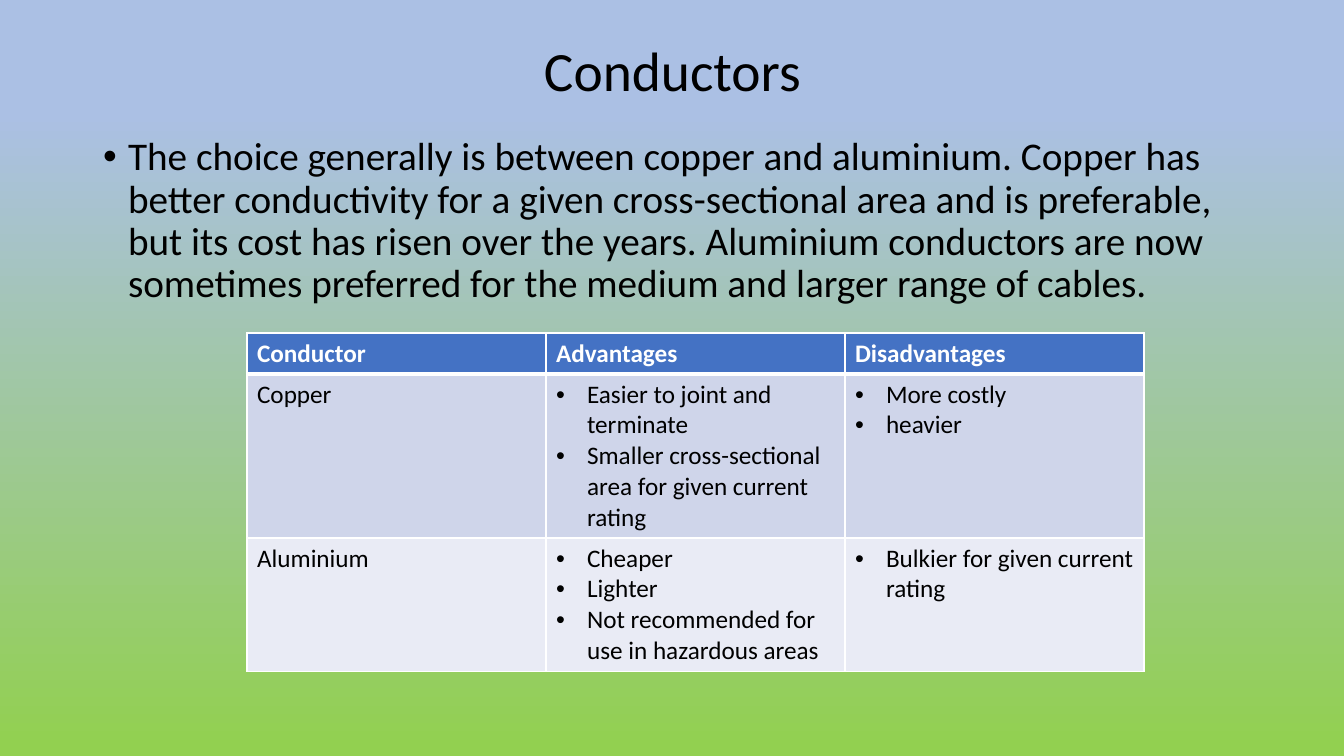
from lxml import etree
from pptx import Presentation
from pptx.dml.color import RGBColor
from pptx.enum.text import MSO_ANCHOR, MSO_AUTO_SIZE, PP_ALIGN
from pptx.oxml.ns import qn
from pptx.util import Emu, Pt

LEFT, CENTER = PP_ALIGN.LEFT, PP_ALIGN.CENTER
TOP, MIDDLE = MSO_ANCHOR.TOP, MSO_ANCHOR.MIDDLE
NO_AUTOFIT = MSO_AUTO_SIZE.NONE
SLIDE_WIDTH, SLIDE_HEIGHT = 1344, 756
SCALE = 12192000 / SLIDE_WIDTH
FONT = "Calibri"
COLORS = {
    "sky": "ABC0E4",
    "grass": "92D050",
    "text": "000000",
    "white": "FFFFFF",
    "header": "4472C4",
    "band_dark": "CFD5EA",
    "band_light": "E9EBF5",
}

TITLE = "Conductors"
BODY = (
    "The choice generally is between copper and aluminium. Copper has better "
    "conductivity for a given cross-sectional area and is preferable, but its cost "
    "has risen over the years. Aluminium conductors are now sometimes preferred "
    "for the medium and larger range of cables."
)
HEADERS = ["Conductor", "Advantages", "Disadvantages"]
CONDUCTORS = [
    (
        "Copper",
        ["Easier to joint and terminate", "Smaller cross-sectional area for given current rating"],
        ["More costly", "heavier"],
    ),
    (
        "Aluminium",
        ["Cheaper", "Lighter", "Not recommended for use in hazardous areas"],
        ["Bulkier for given current rating"],
    ),
]


def px(length):
    return Emu(round(length * SCALE))


def add_color(parent, name):
    solid = etree.SubElement(parent, qn("a:solidFill"))
    etree.SubElement(solid, qn("a:srgbClr"), val=COLORS[name])


def write_text(frame, lines, size=18, color="text", bold=False, align=LEFT,
               indent=0, line_spacing=None):
    for index, line in enumerate(lines):
        paragraph = frame.paragraphs[0] if index == 0 else frame.add_paragraph()
        if indent:
            properties = paragraph._p.get_or_add_pPr()
            properties.set("marL", str(px(indent)))
            properties.set("indent", str(-px(indent)))
            etree.SubElement(properties, qn("a:buFont"), typeface="Arial")
            etree.SubElement(properties, qn("a:buChar"), char="•")
        paragraph.alignment = align
        paragraph.space_before = Pt(0)
        if line_spacing:
            paragraph.line_spacing = line_spacing
        run = paragraph.add_run()
        run.text = line
        run.font.name = FONT
        run.font.size = Pt(size)
        run.font.bold = bold
        run.font.color.rgb = RGBColor.from_string(COLORS[color])


class SlideBuilder:
    def __init__(self, presentation):
        self.slide = presentation.slides.add_slide(presentation.slide_layouts[1])

    def background(self, stops):
        fill = self.slide.background.fill
        fill.gradient()
        fill.gradient_angle = 270
        stop_list = self.slide._element.find(".//" + qn("a:gsLst"))
        for stop in list(stop_list):
            stop_list.remove(stop)
        for percent, name in stops:
            stop = etree.SubElement(stop_list, qn("a:gs"), pos=str(percent * 1000))
            etree.SubElement(stop, qn("a:srgbClr"), val=COLORS[name])

    def placeholder(self, index, lines, left, top, width, height, anchor=TOP, **style):
        shape = self.slide.placeholders[index]
        shape.left, shape.top = px(left), px(top)
        shape.width, shape.height = px(width), px(height)
        frame = shape.text_frame
        frame.word_wrap = True
        frame.auto_size = NO_AUTOFIT
        frame.vertical_anchor = anchor
        write_text(frame, lines, **style)

    def cell(self, cell, content, fill, top=1, bottom=1, **style):
        properties = cell._tc.get_or_add_tcPr()
        for side, width in (("L", 1), ("R", 1), ("T", top), ("B", bottom)):
            line = etree.SubElement(properties, qn("a:ln" + side), w=str(Pt(width)))
            add_color(line, "white")
        cell.fill.solid()
        cell.fill.fore_color.rgb = RGBColor.from_string(COLORS[fill])
        if isinstance(content, list):
            write_text(cell.text_frame, content, indent=31, **style)
        else:
            write_text(cell.text_frame, [content], **style)

    def table(self, left, top, column_width, row_heights, headers, rows):
        table = self.slide.shapes.add_table(
            len(row_heights), len(headers), px(left), px(top),
            px(column_width * len(headers)), px(sum(row_heights)),
        ).table
        for column in table.columns:
            column.width = px(column_width)
        for row, height in zip(table.rows, row_heights):
            row.height = px(height)
        for column, header in enumerate(headers):
            self.cell(table.cell(0, column), header, "header", bottom=3,
                      color="white", bold=True)
        for row, contents in enumerate(rows, 1):
            fill = "band_dark" if row % 2 else "band_light"
            for column, content in enumerate(contents):
                self.cell(table.cell(row, column), content, fill, top=3 if row == 1 else 1)


def main():
    presentation = Presentation()
    presentation.slide_width = px(SLIDE_WIDTH)
    presentation.slide_height = px(SLIDE_HEIGHT)
    builder = SlideBuilder(presentation)
    builder.background([(3, "sky"), (15, "sky"), (99, "grass")])
    builder.placeholder(0, [TITLE], 93, 40, 1159, 67, anchor=MIDDLE,
                        size=39.6, align=CENTER, line_spacing=0.9)
    builder.placeholder(1, [BODY], 93, 132, 1159, 548,
                        size=28, indent=25, line_spacing=0.9)
    builder.table(247, 333, 299, [41, 164, 132], HEADERS, CONDUCTORS)
    presentation.save("out.pptx")


if __name__ == "__main__":
    main()
